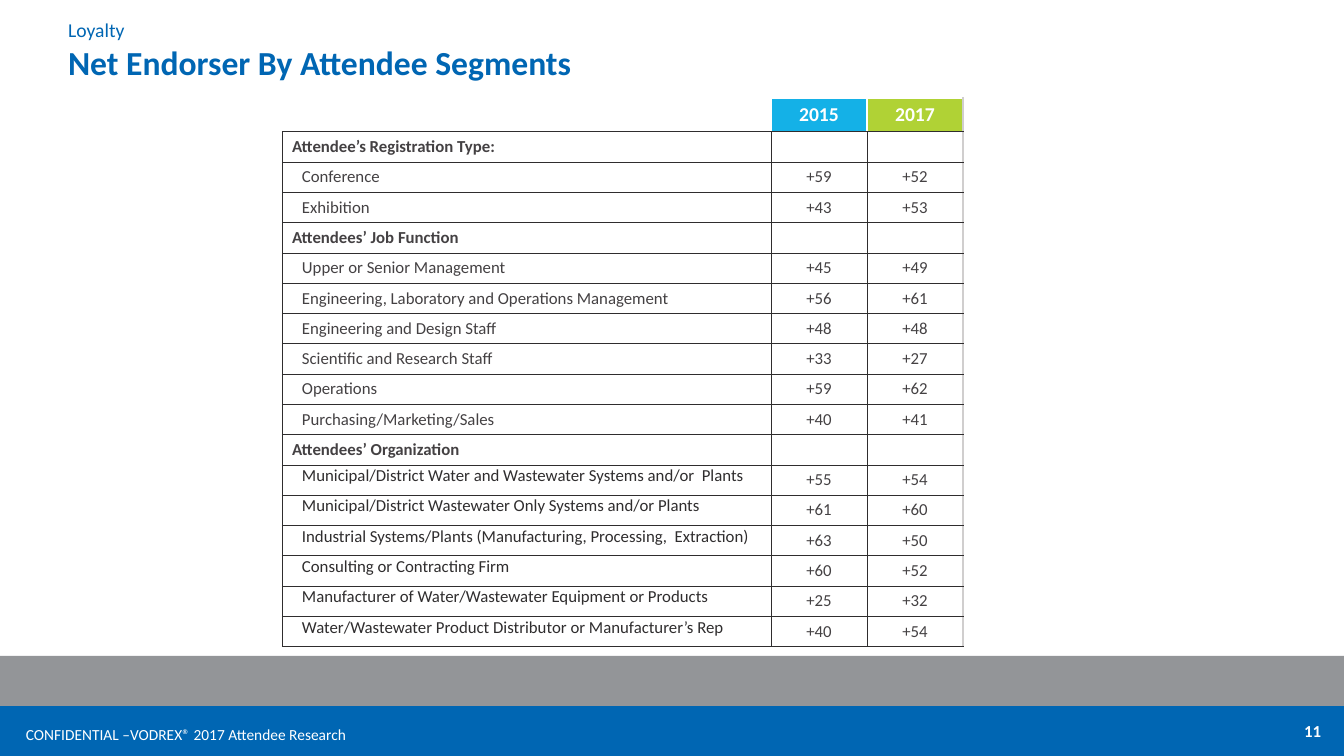
from lxml import etree
from pptx import Presentation
from pptx import util as u
from pptx.dml.color import RGBColor
from pptx.enum import shapes, text
from pptx.oxml.ns import qn

PX = 914400 / 100.8
BLUE = RGBColor(0x00, 0x66, 0xB3)
GRAY = RGBColor(0x93, 0x95, 0x98)
CYAN = RGBColor(0x14, 0xB1, 0xE7)
LIME = RGBColor(0xB0, 0xD2, 0x35)
WHITE = RGBColor(0xFF, 0xFF, 0xFF)
DARK = RGBColor(0x44, 0x41, 0x43)
INK = RGBColor(0x2F, 0x2D, 0x2E)
PALE = RGBColor(0xD0, 0xCE, 0xCE)
LEFT, MID, RIGHT = text.PP_ALIGN.LEFT, text.PP_ALIGN.CENTER, text.PP_ALIGN.RIGHT

ROWS = [
    ("Attendee’s Registration Type:", "", ""),
    ("Conference", "+59", "+52"),
    ("Exhibition", "+43", "+53"),
    ("Attendees’ Job Function", "", ""),
    ("Upper or Senior Management", "+45", "+49"),
    ("Engineering, Laboratory and Operations Management", "+56", "+61"),
    ("Engineering and Design Staff", "+48", "+48"),
    ("Scientific and Research Staff", "+33", "+27"),
    ("Operations", "+59", "+62"),
    ("Purchasing/Marketing/Sales", "+40", "+41"),
    ("Attendees’ Organization", "", ""),
    ("Municipal/District Water and Wastewater Systems and/or  Plants", "+55", "+54"),
    ("Municipal/District Wastewater Only Systems and/or Plants", "+61", "+60"),
    ("Industrial Systems/Plants (Manufacturing, Processing,  Extraction)", "+63", "+50"),
    ("Consulting or Contracting Firm", "+60", "+52"),
    ("Manufacturer of Water/Wastewater Equipment or Products", "+25", "+32"),
    ("Water/Wastewater Product Distributor or Manufacturer’s Rep", "+40", "+54"),
]
ORG = 11


def px(*nums):
    return [u.Emu(round(n * PX)) for n in nums]


def write(frame, words, size, color, bold=False, align=LEFT):
    para = frame.paragraphs[0]
    para.text = words
    para.alignment = align
    font = para.font
    font.name, font.size, font.bold = "Calibri", u.Pt(size), bold
    font.color.rgb = color
    return para


deck = Presentation()
deck.slide_width, deck.slide_height = px(1344, 756)
slide = deck.slides.add_slide(deck.slide_layouts[1])

for top, color in ((706, BLUE), (656, GRAY)):
    band = slide.shapes.add_shape(shapes.MSO_SHAPE.RECTANGLE, *px(0, top, 1344, 50))
    band.shadow.inherit = False
    band.fill.solid()
    band.fill.fore_color.rgb = color
    band.line.fill.background()

for box, words, size, bold, align in (
    ((16, 720, 766, 29), "CONFIDENTIAL –VODREX® 2017 Attendee Research", 11, False, LEFT),
    ((1029, 716, 302, 40), "11", 12, True, RIGHT),
):
    frame = slide.shapes.add_textbox(*px(*box)).text_frame
    frame.word_wrap = True
    write(frame, words, size, WHITE, bold, align)

title, label = slide.shapes.title, slide.placeholders[1]
for holder, box, words, size, bold in (
    (title, (58, 49, 1210, 32), "Net Endorser By Attendee Segments", 24, True),
    (label, (58, 14, 259, 35), "Loyalty", 14, False),
):
    holder.left, holder.top, holder.width, holder.height = px(*box)
    frame = holder.text_frame
    frame.auto_size = text.MSO_AUTO_SIZE.NONE
    frame.vertical_anchor = text.MSO_ANCHOR.MIDDLE
    para = frame.paragraphs[0]
    para.line_spacing = 0.9
    para.space_before = u.Pt(0)
    props = para._p.get_or_add_pPr()
    props.set("marL", "0")
    props.set("indent", "0")
    etree.SubElement(props, qn("a:buNone"))
    write(frame, words, size, BLUE, bold)

grid = slide.shapes.add_table(len(ROWS) + 1, 3, *px(282, 98, 681, 543)).table
grid.first_row = grid.horz_banding = False
for col, width in zip(grid.columns, px(489, 96, 96)):
    col.width = width
for row, height in zip(grid.rows, px(33, *[30] * len(ROWS))):
    row.height = height

for r, row in enumerate([("", "2015", "2017")] + ROWS):
    head = r == 0
    part = not head and not row[1]
    for c, words in enumerate(row):
        cell = grid.cell(r, c)
        side = WHITE if head else INK
        edge = PALE if c == 2 else side
        props = cell._tc.get_or_add_tcPr()
        for tag, color in (("L", side), ("R", edge), ("T", side), ("B", INK)):
            width = 3175 if color == INK else 12700
            line = etree.SubElement(props, qn("a:ln" + tag), w=str(width))
            fill = etree.SubElement(line, qn("a:solidFill"))
            etree.SubElement(fill, qn("a:srgbClr"), val=str(color))

        cell.fill.solid()
        cell.fill.fore_color.rgb = (WHITE, CYAN, LIME)[c] if head else WHITE
        cell.vertical_anchor = text.MSO_ANCHOR.MIDDLE
        if c == 0 and not head and not part:
            cell.margin_left = px(20)[0]
        low = c == 0 and r > ORG
        if low:
            cell.vertical_anchor = text.MSO_ANCHOR.TOP
            cell.margin_top, cell.margin_right, cell.margin_bottom = px(1, 1, 0)

        size = 14 if head else 12
        color = WHITE if head else INK if low else DARK
        para = write(cell.text_frame, words, size, color, head or part, MID if c else LEFT)
        if not words:
            para._p.get_or_add_endParaRPr().set("sz", str(size * 100))

deck.save("out.pptx")
